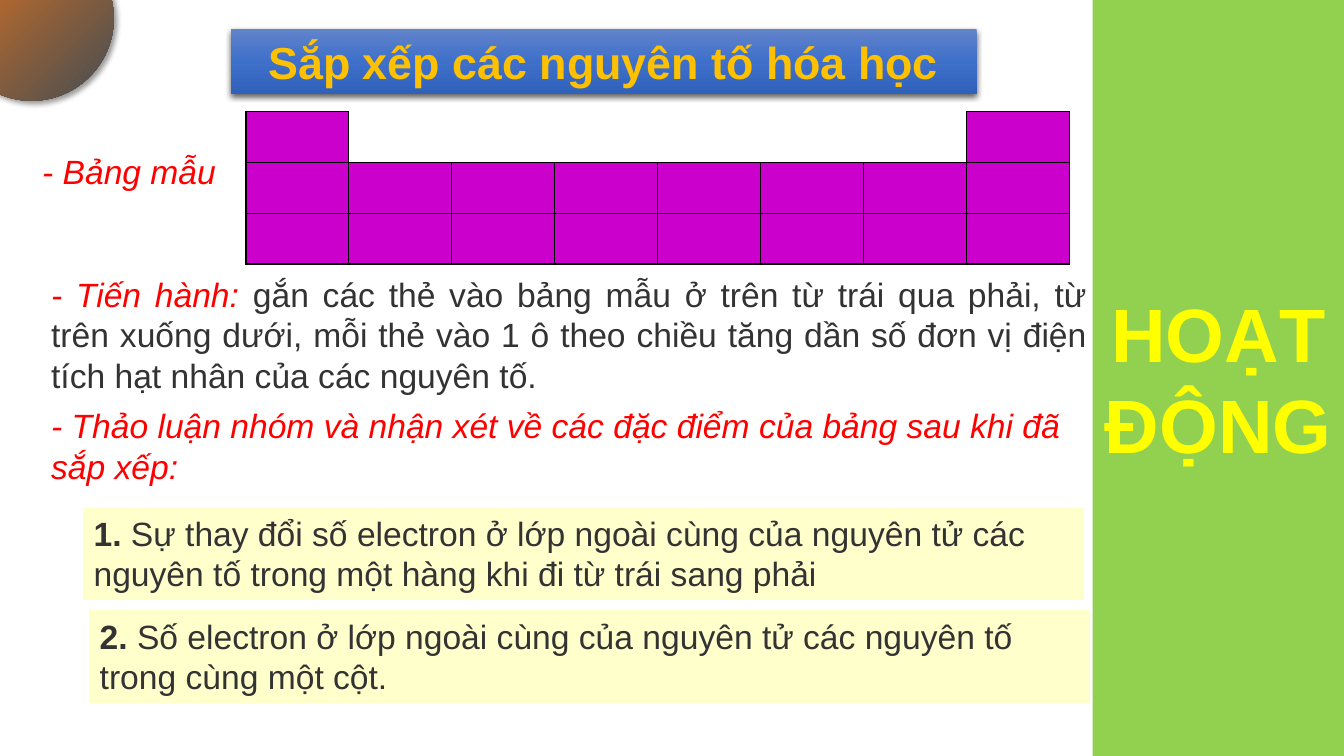
from lxml import etree
from pptx import Presentation
from pptx.dml.color import RGBColor
from pptx.enum.shapes import MSO_SHAPE
from pptx.enum.text import MSO_ANCHOR, MSO_AUTO_SIZE, PP_ALIGN
from pptx.oxml.ns import qn
from pptx.util import Inches, Pt

RECT, ELLIPSE = MSO_SHAPE.RECTANGLE, MSO_SHAPE.OVAL
TOP, MIDDLE = MSO_ANCHOR.TOP, MSO_ANCHOR.MIDDLE
LEFT, CENTER, JUSTIFY = PP_ALIGN.LEFT, PP_ALIGN.CENTER, PP_ALIGN.JUSTIFY
GROW = MSO_AUTO_SIZE.SHAPE_TO_FIT_TEXT

BLACK = RGBColor(0x00, 0x00, 0x00)
GREEN = RGBColor(0x92, 0xD0, 0x50)
YELLOW = RGBColor(0xFF, 0xFF, 0x00)
GOLD = RGBColor(0xFF, 0xC0, 0x00)
PURPLE = RGBColor(0xCC, 0x00, 0xCC)
RED = RGBColor(0xFF, 0x00, 0x00)
CHARCOAL = RGBColor(0x33, 0x33, 0x33)
CREAM = RGBColor(0xFF, 0xFF, 0xCC)
SLATE = RGBColor(0x44, 0x4D, 0x54)
COPPER = RGBColor(0xBC, 0x6B, 0x2A)
AMBER = RGBColor(0xCA, 0x7D, 0x32)
BLUE_LIGHT = RGBColor(0x61, 0x83, 0xCB)
BLUE_MID = RGBColor(0x3E, 0x70, 0xCA)
BLUE_DEEP = RGBColor(0x30, 0x62, 0xBB)


def add_xml(parent, tag, **attributes):
    """Append a drawing element and return it."""
    values = {name: str(value) for name, value in attributes.items()}
    return etree.SubElement(parent, qn(tag), values)


class LessonSlide:
    """Style and slide; boxes are (left, top, width, height) in percent."""

    font_name = "Arial"
    body_size = 24

    def __init__(self, presentation):
        self.width = presentation.slide_width
        self.height = presentation.slide_height
        self.shapes = presentation.slides.add_slide(presentation.slide_layouts[6]).shapes

    def place(self, box):
        sides = (self.width, self.height) * 2
        return [round(share * side / 100) for share, side in zip(box, sides)]

    def panel(self, kind, box, fill=None, line=None):
        panel = self.shapes.add_shape(kind, *self.place(box))
        panel.shadow.inherit = False
        if fill is None:
            panel.fill.background()
        else:
            panel.fill.solid()
            panel.fill.fore_color.rgb = fill
        if line is None:
            panel.line.fill.background()
        else:
            panel.line.color.rgb = line
            panel.line.width = Pt(0.75)
        return panel

    def glossy_panel(self, kind, box, stops, angle, shadow):
        """Panel with a gradient and a shadow (opacity, blur, distance, angle)."""
        panel = self.panel(kind, box)
        properties = panel._element.spPr
        gradient = etree.Element(qn("a:gradFill"), rotWithShape="1")
        stop_list = add_xml(gradient, "a:gsLst")
        for position, color in stops:
            stop = add_xml(stop_list, "a:gs", pos=position * 1000)
            add_xml(stop, "a:srgbClr", val=color)
        add_xml(gradient, "a:lin", ang=angle * 60000, scaled=0)
        properties.replace(properties.find(qn("a:noFill")), gradient)

        opacity, blur, distance, direction = shadow
        outer = add_xml(properties.find(qn("a:effectLst")), "a:outerShdw",
                        blurRad=int(Pt(blur)), dist=int(Pt(distance)),
                        dir=direction * 60000, algn="ctr", rotWithShape=0)
        tint = add_xml(outer, "a:srgbClr", val=BLACK)
        add_xml(tint, "a:alpha", val=opacity * 1000)
        return panel

    def set_text(self, holder, runs, color, size=body_size, align=LEFT, anchor=TOP,
                 grow=True, bold=None, italic=None):
        """Fill a holder with runs given as (text, own font settings)."""
        frame = holder.text_frame
        frame.word_wrap = True
        frame.vertical_anchor = anchor
        if grow:
            frame.auto_size = GROW
        paragraph = frame.paragraphs[0]
        paragraph.alignment = align
        font = paragraph.font
        font.name, font.size = self.font_name, Pt(size)
        font.bold, font.italic = bold, italic
        font.color.rgb = color
        for text, settings in runs:
            run = paragraph.add_run()
            run.text = text
            run.font.bold = settings.get("bold")
            run.font.italic = settings.get("italic")
            if "color" in settings:
                run.font.color.rgb = settings["color"]

    def text(self, box, runs, color, **style):
        self.set_text(self.shapes.add_textbox(*self.place(box)), runs, color, **style)

    def question(self, box, number, wording):
        card = self.panel(RECT, box, CREAM, CREAM)
        self.set_text(card, [(number, {"bold": True}), (wording, {})], CHARCOAL)

    def border(self, cell, open_sides=""):
        properties = cell._tc.get_or_add_tcPr()
        for side in "LRTB":
            edge = add_xml(properties, f"a:ln{side}", w=int(Pt(1)))
            if side in open_sides:
                add_xml(edge, "a:noFill")
            else:
                add_xml(add_xml(edge, "a:solidFill"), "a:srgbClr", val=BLACK)

    def element_grid(self, box, rows, columns):
        """Grid whose first row is filled at its two ends only."""
        grid = self.shapes.add_table(rows, columns, *self.place(box)).table
        grid.first_row = grid.horz_banding = False
        gap = grid.cell(0, 1)
        gap.merge(grid.cell(0, columns - 2))
        for cell in grid.iter_cells():
            if cell.is_spanned:
                continue
            if cell.is_merge_origin:
                self.border(cell, open_sides="T")
                cell.fill.background()
            else:
                self.border(cell)
                cell.fill.solid()
                cell.fill.fore_color.rgb = PURPLE


def main():
    presentation = Presentation()
    presentation.slide_width, presentation.slide_height = Inches(13.33), Inches(7.5)
    lesson = LessonSlide(presentation)

    # Corner ornament and side panel
    lesson.glossy_panel(ELLIPSE, (-3.75, -8.4, 12.22, 21.73),
                        [(0, SLATE), (75, COPPER), (100, AMBER)], 225, (40, 4, 3, 45))
    activity = lesson.panel(RECT, (81.3, 0, 18.7, 100), GREEN)
    lesson.set_text(activity, [("HOẠT ĐỘNG", {})], YELLOW, size=54, align=CENTER,
                    anchor=MIDDLE, grow=False, bold=True)

    # Title
    title = lesson.glossy_panel(RECT, (17.17, 3.87, 55.5, 8.53),
                                [(0, BLUE_LIGHT), (50, BLUE_MID), (100, BLUE_DEEP)],
                                90, (63, 4.5, 1.5, 90))
    lesson.set_text(title, [("Sắp xếp các nguyên tố hóa học", {})], GOLD, size=32,
                    align=CENTER, bold=True)

    # Sample table
    lesson.element_grid((18.3, 14.8, 61.28, 20.13), rows=3, columns=8)
    lesson.text((2.4, 19.33, 17.4, 6.67), [("- Bảng mẫu", {})], RED, italic=True)

    # Instructions
    lesson.text((3.07, 35.6, 78.53, 17.47), [
        ("- Tiến hành: ", {"italic": True, "color": RED}),
        ("gắn các thẻ vào bảng mẫu ở trên từ trái qua phải, từ trên xuống dưới, "
         "mỗi thẻ vào 1 ô theo chiều tăng dần số đơn vị điện tích hạt nhân của "
         "các nguyên tố.", {})], CHARCOAL, align=JUSTIFY)
    lesson.text((3.07, 52.93, 78.53, 12.13), [
        ("- Thảo luận nhóm và nhận xét về các đặc điểm của bảng sau khi đã sắp xếp:",
         {})], RED, italic=True)

    # Discussion questions
    lesson.question((6.23, 67.2, 74.4, 12.13), "1.",
                    " Sự thay đổi số electron ở lớp ngoài cùng của nguyên tử các "
                    "nguyên tố trong một hàng khi đi từ trái sang phải")
    lesson.question((6.68, 80.8, 74.4, 12.13), "2. ",
                    "Số electron ở lớp ngoài cùng của nguyên tử các nguyên tố "
                    "trong cùng một cột.")

    presentation.save("out.pptx")


if __name__ == "__main__":
    main()
